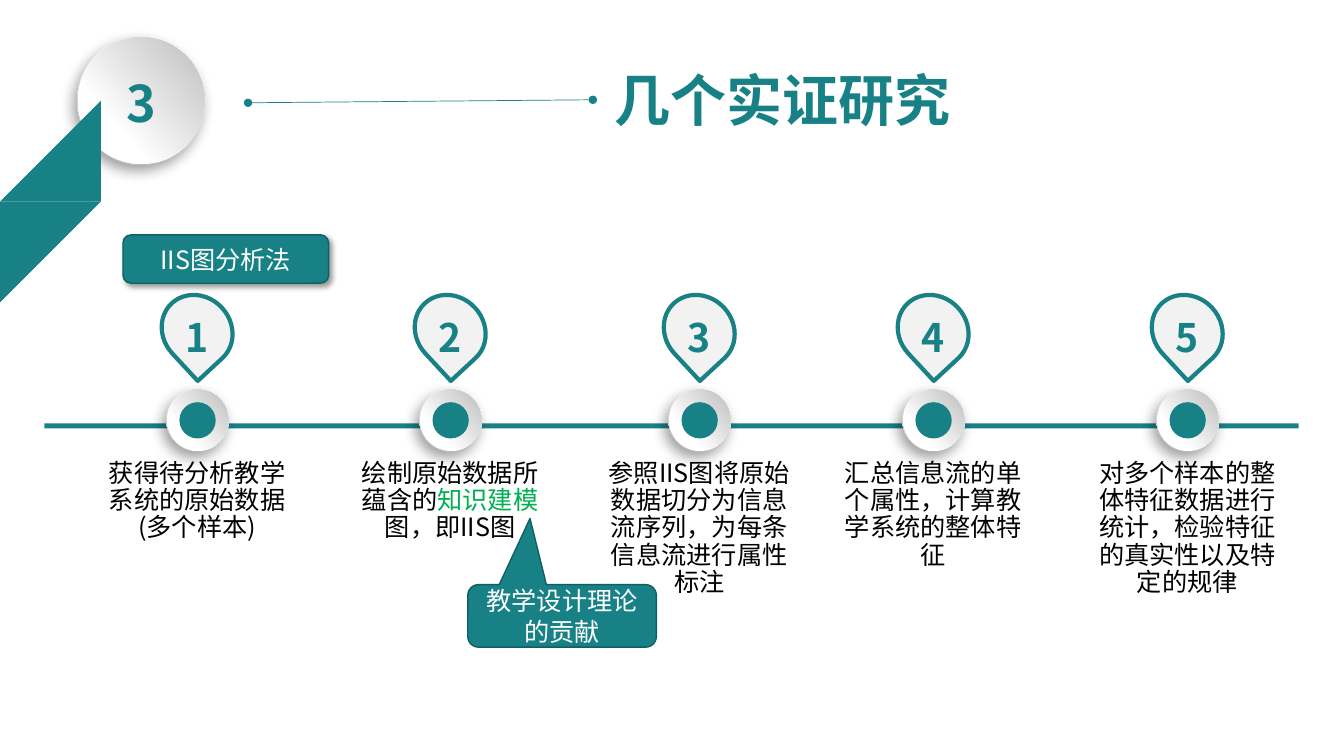
"""Build a timeline slide that shows the five steps of the IIS map analysis method."""
from dataclasses import dataclass

from lxml import etree
from pptx import Presentation
from pptx.dml.color import RGBColor
from pptx.enum.shapes import MSO_CONNECTOR, MSO_SHAPE
from pptx.enum.text import MSO_ANCHOR, PP_ALIGN
from pptx.oxml.ns import qn
from pptx.shapes.autoshape import Shape
from pptx.slide import Slide
from pptx.text.text import TextFrame
from pptx.util import Inches, Pt

CENTER, LEFT, MIDDLE = PP_ALIGN.CENTER, PP_ALIGN.LEFT, MSO_ANCHOR.MIDDLE
OVAL, RECTANGLE, TEAR = MSO_SHAPE.OVAL, MSO_SHAPE.RECTANGLE, MSO_SHAPE.TEAR
ROUNDED, CALLOUT = MSO_SHAPE.ROUNDED_RECTANGLE, MSO_SHAPE.ROUNDED_RECTANGULAR_CALLOUT
STRAIGHT = MSO_CONNECTOR.STRAIGHT


@dataclass(frozen=True)
class Theme:
    """Colours, font and type sizes of the slide."""
    font: str = "Noto Sans CJK SC"
    teal: str = "188186"
    dark_teal: str = "125F63"
    green: str = "00B050"
    pale: str = "F2F2F2"
    white: str = "FFFFFF"
    black: str = "000000"
    rim_gray: str = "B8B8B8"
    face_gray: str = "BFBFBF"
    title: int = 40
    section: int = 36
    number: int = 28
    body: int = 18


@dataclass(frozen=True)
class Span:
    """A run of text with its look."""
    text: str
    color: str
    size: int
    bold: bool = False


@dataclass(frozen=True)
class Box:
    """A place on the slide in inches."""
    left: float
    top: float
    width: float
    height: float


@dataclass(frozen=True)
class Shadow:
    """An outer shadow: percent, points, points and degrees."""
    opacity: int
    blur: int
    distance: int
    direction: int


@dataclass(frozen=True)
class Step:
    """A timeline step with the left edge of its column."""
    left: float
    spans: tuple[Span, ...]


THEME = Theme()
DISC_SHADOW = Shadow(39, 10, 5, 123)
TAG_SHADOW = Shadow(40, 4, 3, 45)
RAYS = (
    ((1.21, 2.37), (0.53, 1.2), (0.12, 1.74)),
    ((1.22, 2.42), (0.49, 2.1), (0.36, 2.53)),
    ((1.23, 2.33), (1.41, 1.79), (1.03, 1.82)),
)


def body(text: str, color: str = THEME.black) -> Span:
    """Return a span of body text."""
    return Span(text, color, THEME.body)


STEPS = (
    Step(0.95, (body("获得待分析教学系统的原始数据(多个样本)"),)),
    Step(3.46, (body("绘制原始数据所蕴含的"), body("知识建模", THEME.green), body("图，即IIS图"))),
    Step(5.93, (body("参照IIS图将原始数据切分为信息流序列，为每条信息流进行属性标注"),)),
    Step(8.25, (body("汇总信息流的单个属性，计算教学系统的整体特征"),)),
    Step(10.77, (body("对多个样本的整体特征数据进行统计，检验特征的真实性以及特定的规律"),)),
)


def write(frame: TextFrame, spans: tuple[Span, ...], align: PP_ALIGN = CENTER,
          spacing: float = 1.0, wrap: bool = True) -> None:
    """Write spans as one paragraph."""
    frame.word_wrap = wrap
    para = frame.paragraphs[0]
    para.alignment, para.line_spacing = align, spacing
    for span in spans:
        run = para.add_run()
        run.text = span.text
        font = run.font
        font.name, font.size, font.bold = THEME.font, Pt(span.size), span.bold
        font.color.rgb = RGBColor.from_string(span.color)
        east_asian = etree.SubElement(run._r.get_or_add_rPr(), qn("a:ea"))
        east_asian.set("typeface", THEME.font)


def add_text(page: Slide, box: Box, spans: tuple[Span, ...], align: PP_ALIGN = CENTER,
             spacing: float = 1.0, wrap: bool = True) -> None:
    """Add a text box."""
    area = page.shapes.add_textbox(*map(Inches, (box.left, box.top, box.width, box.height)))
    write(area.text_frame, spans, align, spacing, wrap)


def paint(shape: Shape, fill: str, line: str = "", weight: float = 1) -> None:
    """Set a solid fill, an optional outline and no shadow."""
    shape.shadow.inherit = False
    shape.fill.solid()
    shape.fill.fore_color.rgb = RGBColor.from_string(fill)
    if line:
        shape.line.color.rgb = RGBColor.from_string(line)
        shape.line.width = Pt(weight)
    else:
        shape.line.fill.background()


def add_shape(page: Slide, kind: MSO_SHAPE, box: Box, fill: str,
              line: str = "", weight: float = 1) -> Shape:
    """Add a painted preset shape."""
    shape = page.shapes.add_shape(
        kind, *map(Inches, (box.left, box.top, box.width, box.height)))
    paint(shape, fill, line, weight)
    return shape


def cast_shadow(shape: Shape, shadow: Shadow) -> None:
    """Give a shape an outer shadow."""
    effects = shape._element.spPr.find(qn("a:effectLst"))
    outer = etree.SubElement(effects, qn("a:outerShdw"), blurRad=str(Pt(shadow.blur)),
                             dist=str(Pt(shadow.distance)), dir=str(shadow.direction * 60000),
                             algn="ctr", rotWithShape="0")
    color = etree.SubElement(outer, qn("a:srgbClr"), val=THEME.black)
    etree.SubElement(color, qn("a:alpha"), val=str(shadow.opacity * 1000))


def add_disc(page: Slide, center_x: float, center_y: float, diameter: float) -> None:
    """Add a raised disc made of a shadowed rim and a face."""
    layers = ((diameter, THEME.rim_gray, 0.17, 0.88, 253),
              (diameter - 0.01, THEME.face_gray, 0.29, 0.98, 42))
    for size, gray, start, end, angle in layers:
        box = Box(center_x - size / 2, center_y - size / 2, size, size)
        layer = add_shape(page, OVAL, box, THEME.white)
        layer.fill.gradient()
        layer.fill.gradient_angle = angle
        for stop, color, position in zip(layer.fill.gradient_stops,
                                         (THEME.white, gray), (start, end)):
            stop.color.rgb = RGBColor.from_string(color)
            stop.position = position
        if size == diameter:
            cast_shadow(layer, DISC_SHADOW)


def add_header(page: Slide) -> None:
    """Add the section number, the title and the line between them."""
    add_disc(page, 1.4, 1.0, 1.27)
    add_text(page, Box(0.74, 0.67, 1.32, 0.71), (Span("3", THEME.teal, THEME.section, True),))
    title = Span("几个实证研究", THEME.teal, THEME.title, True)
    add_text(page, Box(6.0, 0.6, 3.78, 0.77), (title,), LEFT, wrap=False)
    link = page.shapes.add_connector(STRAIGHT, *map(Inches, (2.46, 1.02, 5.88, 0.99)))
    link.line.color.rgb = RGBColor.from_string(THEME.teal)
    link.line.width = Pt(0.5)
    for end in ("a:headEnd", "a:tailEnd"):
        etree.SubElement(link.line._get_or_add_ln(), qn(end), type="oval")
    etree.SubElement(link._element.spPr, qn("a:effectLst"))


def add_tag(page: Slide) -> None:
    """Add the method name with its three rays."""
    for start, *others in RAYS:
        builder = page.shapes.build_freeform(*start, scale=Inches(1))
        builder.add_line_segments(others, close=True)
        paint(builder.convert_to_shape(), THEME.teal)
    tag = add_shape(page, ROUNDED, Box(1.22, 2.33, 2.04, 0.48), THEME.teal, THEME.dark_teal)
    cast_shadow(tag, TAG_SHADOW)
    tag.text_frame.vertical_anchor = MIDDLE
    write(tag.text_frame, (body("IIS图分析法", THEME.white),))


def add_step(page: Slide, number: int, step: Step) -> None:
    """Add the pin, the marker and the text of a step."""
    add_disc(page, step.left + 1.01, 4.17, 0.62)
    add_shape(page, OVAL, Box(step.left + 0.83, 3.99, 0.36, 0.36), THEME.teal)
    pin = add_shape(page, TEAR, Box(step.left + 0.67, 2.91, 0.67, 0.74),
                    THEME.pale, THEME.teal, 3)
    pin.rotation = 137.1
    add_text(page, Box(step.left + 0.67, 3.06, 0.67, 0.57),
             (Span(str(number), THEME.teal, THEME.number, True),))
    add_text(page, Box(step.left, 4.52, 2.01, 1.38), step.spans, spacing=0.9)


def add_callout(page: Slide) -> None:
    """Add the callout that points at the second step."""
    callout = add_shape(page, CALLOUT, Box(4.64, 5.8, 1.87, 0.62), THEME.teal, THEME.dark_teal)
    for index, value in enumerate((-0.17, -1.56, 0.17)):
        callout.adjustments[index] = value
    callout.text_frame.vertical_anchor = MIDDLE
    write(callout.text_frame, (body("教学设计理论的贡献", THEME.white),))


def main() -> None:
    """Build and save the deck."""
    deck = Presentation()
    deck.slide_width, deck.slide_height = Inches(13.33), Inches(7.5)
    page = deck.slides.add_slide(deck.slide_layouts[6])
    add_header(page)
    add_shape(page, RECTANGLE, Box(0.44, 4.2, 12.44, 0.05), THEME.teal)
    add_tag(page)
    for number, step in enumerate(STEPS, 1):
        add_step(page, number, step)
    add_callout(page)
    deck.save("out.pptx")


if __name__ == "__main__":
    main()
